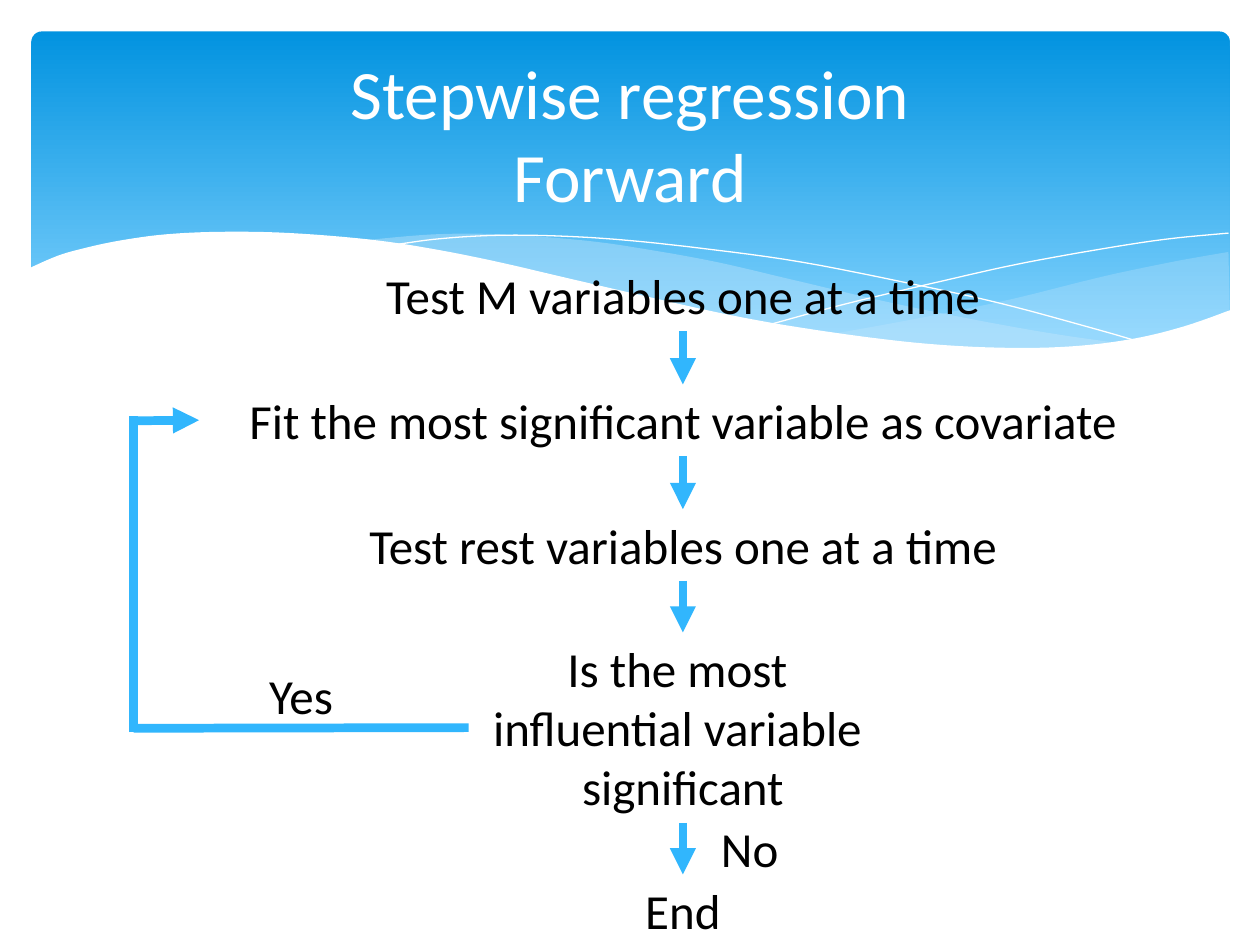
import dataclasses

import pptx
import pptx.dml.color
import pptx.enum.shapes
import pptx.enum.text
import pptx.oxml
import pptx.oxml.ns
import pptx.util
from lxml import etree

PX = 9144  # one px is a hundredth of an inch
MID = 542  # centre line of the flow
Point = tuple[float, float]
RGB = pptx.dml.color.RGBColor.from_string
qn = pptx.oxml.ns.qn


@dataclasses.dataclass(frozen=True)
class Theme:
    font: str = "Calibri"
    head: float = 39.6
    body: float = 28
    ink: str = "000000"
    white: str = "FFFFFF"
    deep: str = "0293E0"
    sky: str = "83D3FE"
    mist: str = "C6E7FC"
    arrow: str = "31B6FD"
    stroke: float = 5


@dataclasses.dataclass(frozen=True)
class Label:
    text: str
    mid: int
    top: int
    wide: int
    high: int = 57


@dataclasses.dataclass(frozen=True)
class Wave:
    curves: list[list[Point]]
    fill: str | None = None
    alpha: int = 100


THEME = Theme()

WAVES = [
    # Right swell
    Wave([[(975, 200), (935, 207), (891, 216), (861, 223), (805, 237), (753, 248),
           (706, 257), (661, 265)],
          [(661, 265), (705, 271), (757, 276), (803, 278), (844, 277), (881, 273),
           (913, 267), (942, 259), (976, 247)]], THEME.mist, 29),
    # Long middle swell
    Wave([[(893, 273), (837, 265), (775, 254), (706, 240), (629, 222), (569, 208),
           (514, 198), (465, 191), (399, 186), (344, 186), (286, 191)],
          [(286, 191), (342, 199), (404, 211), (449, 222), (530, 240), (601, 255),
           (665, 266), (722, 274), (773, 277), (818, 278), (857, 277), (893, 273)]],
         THEME.mist, 40),
    # Two hairlines
    Wave([[(309, 195), (344, 190), (387, 187), (433, 187), (489, 190), (556, 197),
           (636, 208), (727, 226), (795, 241), (869, 261), (907, 272)]]),
    Wave([[(613, 257), (672, 241), (748, 223), (806, 210), (866, 199), (924, 190),
           (975, 185)]]),
    # White foreground
    Wave([[(977, 246), (940, 259), (899, 269), (850, 275), (793, 276), (726, 272),
           (648, 262), (579, 250), (503, 233), (447, 220), (391, 207), (340, 197),
           (292, 190), (230, 185), (177, 184), (132, 186), (95, 191), (67, 197),
           (46, 203), (23, 213)],
          [(23, 213), (23, 329)], [(23, 329), (977, 329)]], THEME.white),
]

STEPS = [
    Label("Test M variables one at a time", MID, 206, 518),
    Label("Fit the most significant variable as covariate", MID, 305, 768),
    Label("Test rest variables one at a time", MID, 404, 558),
    Label("Is the most \ninfluential variable \nsignificant", MID, 502, 340, 151),
    Label("End", MID, 694, 126),
]
NOTES = [Label("Yes", 239, 523, 126), Label("No", 595, 645, 126)]


def smooth(knots: list[Point], parts: int = 6) -> list[Point]:
    """Run a Catmull-Rom curve through the knots."""
    ends = [knots[0], *knots, knots[-1]]
    points = [knots[0]]
    for a, b, c, d in zip(ends, ends[1:], ends[2:], ends[3:]):
        for step in range(1, parts + 1):
            t = step / parts
            points.append(tuple(
                (2 * q + (r - p) * t + (2 * p - 5 * q + 4 * r - s) * t ** 2
                 + (3 * q - p - 3 * r + s) * t ** 3) / 2
                for p, q, r, s in zip(a, b, c, d)))
    return points


def add_wave(shapes, wave: Wave) -> None:
    points = [(x * PX, y * PX) for curve in wave.curves for x, y in smooth(curve)]
    pen = shapes.build_freeform(*points[0], scale=1.0)
    pen.add_line_segments(points[1:], close=wave.fill is not None)
    shape = pen.convert_to_shape()
    shape.shadow.inherit = False
    if wave.fill is None:
        shape.fill.background()
        shape.line.color.rgb = RGB(THEME.white)
        shape.line.width = 0
        return
    shape.line.fill.background()
    shape.fill.solid()
    shape.fill.fore_color.rgb = RGB(wave.fill)
    if wave.alpha < 100:
        color = shape.element.spPr.find(qn("a:solidFill"))[0]
        etree.SubElement(color, qn("a:alpha")).set("val", str(wave.alpha * 1000))


def add_band(shapes) -> None:
    kind = pptx.enum.shapes.MSO_SHAPE.ROUNDED_RECTANGLE
    band = shapes.add_shape(kind, 25 * PX, 25 * PX, 951 * PX, 270 * PX)
    band.adjustments[0] = 0.03
    band.shadow.inherit = False
    band.line.fill.background()
    band.fill.gradient()
    band.fill.gradient_angle = 270
    for stop, place, color in zip(band.fill.gradient_stops, (0, 0.9),
                                  (THEME.deep, THEME.sky)):
        stop.position = place
        stop.color.rgb = RGB(color)


def set_text(frame, text: str, size: float, color: str) -> None:
    frame.text = text
    for para in frame.paragraphs:
        para.alignment = pptx.enum.text.PP_ALIGN.CENTER
        para.font.name = THEME.font
        para.font.size = pptx.util.Pt(size)
        para.font.color.rgb = RGB(color)


def add_label(shapes, label: Label):
    left = label.mid - label.wide // 2
    box = shapes.add_textbox(left * PX, label.top * PX, label.wide * PX, label.high * PX)
    box.text_frame.word_wrap = True
    box.text_frame.auto_size = pptx.enum.text.MSO_AUTO_SIZE.SHAPE_TO_FIT_TEXT
    set_text(box.text_frame, label.text, THEME.body, THEME.ink)
    return box


def add_line(shapes, start: Point = (0, 0), end: Point = (0, 0), head: bool = True):
    kind = pptx.enum.shapes.MSO_CONNECTOR.STRAIGHT
    line = shapes.add_connector(kind, *(n * PX for n in (*start, *end)))
    line.line.color.rgb = RGB(THEME.arrow)
    line.line.width = pptx.util.Pt(THEME.stroke)
    if head:
        etree.SubElement(line.get_or_add_ln(), qn("a:tailEnd")).set("type", "triangle")
    etree.SubElement(line.element.spPr, qn("a:effectLst"))
    return line


def main() -> None:
    deck = pptx.Presentation()
    deck.slide_width, deck.slide_height = 1000 * PX, 750 * PX
    slide = deck.slides.add_slide(deck.slide_layouts[5])
    shapes = slide.shapes

    # Banner with waves
    add_band(shapes)
    for wave in WAVES:
        add_wave(shapes, wave)

    # Title, brought in front of the banner
    title = shapes.title
    title.left, title.top, title.width, title.height = (
        n * PX for n in (50, 37, 900, 137))
    title.text_frame.auto_size = pptx.enum.text.MSO_AUTO_SIZE.NONE
    title.text_frame.vertical_anchor = pptx.enum.text.MSO_ANCHOR.MIDDLE
    set_text(title.text_frame, "Stepwise regression\vForward", THEME.head, THEME.white)
    title.element.getparent().append(title.element)

    # Steps and the arrows between them
    boxes = [add_label(shapes, step) for step in STEPS]
    for above, below in zip(boxes, boxes[1:]):
        arrow = add_line(shapes)
        arrow.begin_connect(above, 2)
        arrow.end_connect(below, 0)

    # Loop back to the second step
    add_line(shapes, (106, 334), (158, 334)).end_connect(boxes[1], 1)
    add_line(shapes, (106, 581), (106, 330), head=False)
    add_line(shapes, (106, 578), (372, 578), head=False).end_connect(boxes[3], 1)

    # Branch names
    for note in NOTES:
        add_label(shapes, note)

    deck.save("out.pptx")


if __name__ == "__main__":
    main()
